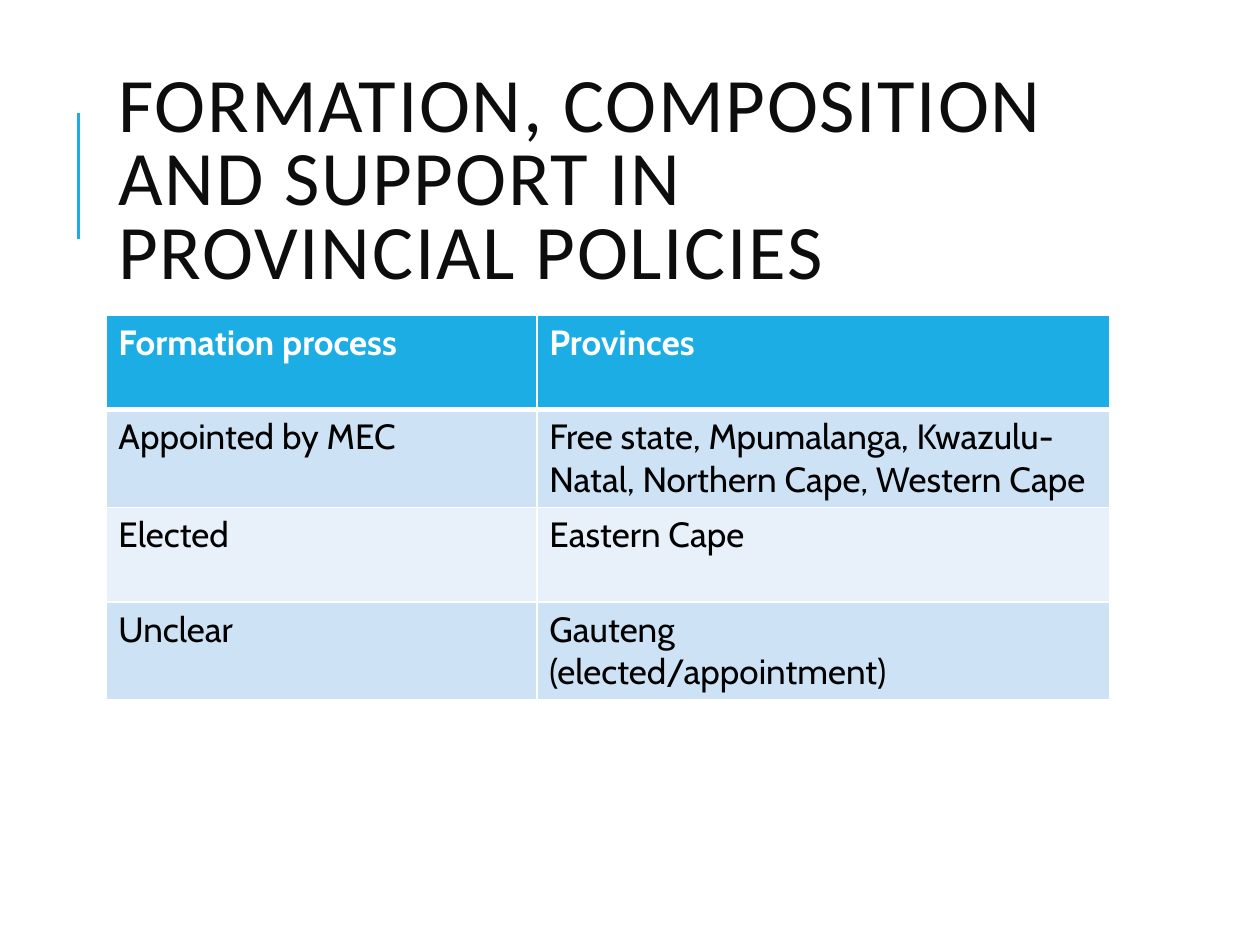
import pptx
import pptx.dml.color
import pptx.enum.shapes
import pptx.enum.text
import pptx.oxml
import pptx.oxml.ns
import pptx.util

Pt = pptx.util.Pt

COLORS = {
    "accent": "1CADE4",
    "title": "0D0D0D",
    "header_text": "FFFFFF",
    "body_text": "000000",
    "border": "FFFFFF",
    "odd_row": "CDE3F5",
    "even_row": "E8F1FA",
}

FORMATION_ROWS = [
    ("Formation process", "Provinces"),
    ("Appointed by MEC",
     "Free state, Mpumalanga, Kwazulu-Natal, Northern Cape, Western Cape"),
    ("Elected", "Eastern Cape"),
    ("Unclear", "Gauteng\n(elected/appointment)"),
]
COLUMN_WIDTHS = (246.25, 327.6)
ROW_HEIGHT = 54
LEFT = 60.5
CONTENT_WIDTH = sum(COLUMN_WIDTHS)


def rgb(name):
    return pptx.dml.color.RGBColor.from_string(COLORS[name])


def set_all(target, values):
    for attribute, value in values.items():
        setattr(target, attribute, value)


def format_font(font, color, **values):
    set_all(font, values)
    font.color.rgb = rgb(color)


def add_title(slide, wording):
    title = slide.shapes.title
    set_all(title, {"left": Pt(LEFT), "top": Pt(46), "width": Pt(CONTENT_WIDTH), "height": Pt(118)})
    frame = title.text_frame
    frame.text = wording
    set_all(frame, {
        "word_wrap": True,
        "auto_size": pptx.enum.text.MSO_AUTO_SIZE.NONE,
        "vertical_anchor": pptx.enum.text.MSO_ANCHOR.MIDDLE,
    })
    paragraph = frame.paragraphs[0]
    set_all(paragraph, {"alignment": pptx.enum.text.PP_ALIGN.LEFT, "line_spacing": 0.8})
    run = paragraph.runs[0]
    format_font(run.font, "title", name="Calibri", size=Pt(44))
    run.font._element.set("spc", "100")


def add_accent_line(slide):
    accent = slide.shapes.add_connector(
        pptx.enum.shapes.MSO_CONNECTOR.STRAIGHT, Pt(44.8), Pt(136.8), Pt(44.8), Pt(64.8))
    accent.line.color.rgb = rgb("accent")
    accent.line.width = Pt(1.5)
    accent._element.spPr.append(pptx.oxml.parse_xml(
        f'<a:effectLst {pptx.oxml.ns.nsdecls("a")}/>'))


def set_borders(cell, widths):
    """Draw the cell's borders; widths maps the sides L, R, T, B, in that order, to points."""
    properties = cell._tc.get_or_add_tcPr()
    for side, width in widths.items():
        properties.append(pptx.oxml.parse_xml(
            f'<a:ln{side} {pptx.oxml.ns.nsdecls("a")} w="{Pt(width)}"><a:solidFill>'
            f'<a:srgbClr val="{COLORS["border"]}"/></a:solidFill></a:ln{side}>'))


def fill_cell(cell, wording, row_number):
    is_header = row_number == 0
    set_borders(cell, {"L": 1, "R": 1, "T": 3 if row_number == 1 else 1, "B": 3 if is_header else 1})
    cell.fill.solid()
    band = "odd_row" if row_number % 2 else "even_row"
    cell.fill.fore_color.rgb = rgb("accent" if is_header else band)
    cell.text = wording
    for paragraph in cell.text_frame.paragraphs:
        format_font(paragraph.runs[0].font, "header_text" if is_header else "body_text",
                    name="Cabin", size=Pt(20), bold=is_header)


def add_formation_table(slide):
    table = slide.shapes.add_table(
        len(FORMATION_ROWS), len(COLUMN_WIDTHS), Pt(LEFT), Pt(180),
        Pt(CONTENT_WIDTH), Pt(ROW_HEIGHT * len(FORMATION_ROWS))).table
    for column, width in zip(table.columns, COLUMN_WIDTHS):
        column.width = Pt(width)
    for row_number, entries in enumerate(FORMATION_ROWS):
        for column_number, wording in enumerate(entries):
            fill_cell(table.cell(row_number, column_number), wording, row_number)


def main():
    presentation = pptx.Presentation()
    set_all(presentation, {"slide_width": Pt(720), "slide_height": Pt(540)})
    slide = presentation.slides.add_slide(presentation.slide_layouts.get_by_name("Title Only"))
    add_accent_line(slide)
    add_title(slide, "FORMATION, COMPOSITION AND SUPPORT IN PROVINCIAL POLICIES")
    add_formation_table(slide)
    presentation.save("out.pptx")


if __name__ == "__main__":
    main()
